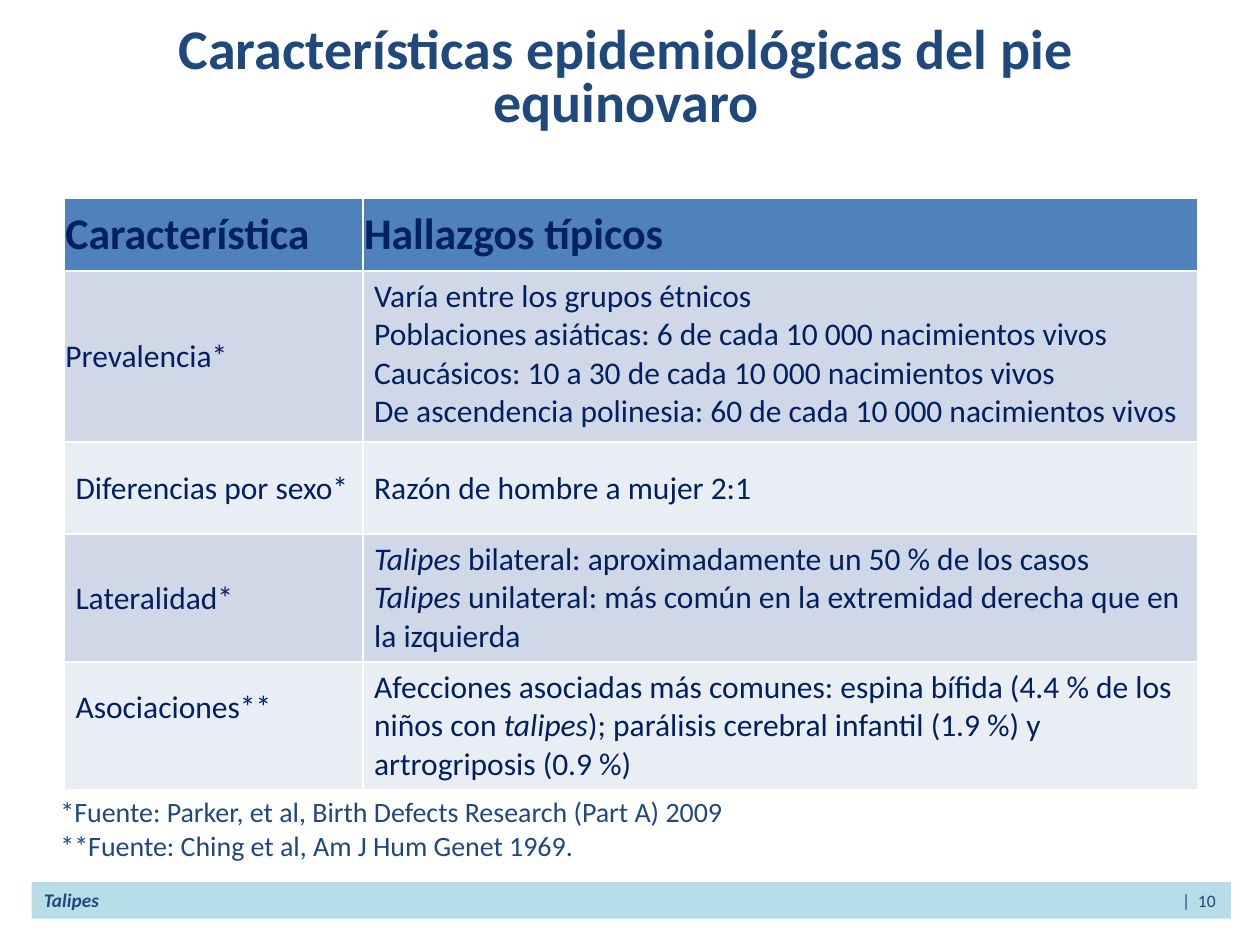
from lxml import etree
from pptx import Presentation, util as u
from pptx.dml.color import RGBColor
from pptx.enum import shapes, text
from pptx.oxml.ns import qn

FONT, BLUE, NAVY = "Calibri", "1F497D", "002060"
COLS = 100  # the slide is a grid of 100 columns by 75 rows

prs = Presentation()
prs.slide_width, prs.slide_height = u.Inches(10), u.Inches(7.5)
unit = prs.slide_width // COLS


def grid(*cells):
    """Turn grid columns and rows into lengths."""
    return [u.Emu(round(n * unit)) for n in cells]


def write(p, marked, size, colour, bold=False):
    """Fill a paragraph; parts between underscores become italic."""
    p.font.name, p.font.size, p.font.bold = FONT, u.Pt(size), bold
    p.font.color.rgb = RGBColor.from_string(colour)
    for i, part in enumerate(marked.split("_")):
        if part:
            r = p.add_run()
            r.text = part
            if i % 2:
                r.font.italic = True


s = prs.slides.add_slide(prs.slide_layouts[5])

# Footer bar, with the page number on a right-aligned tab
bar = s.shapes.add_shape(shapes.MSO_SHAPE.RECTANGLE, *grid(2.5, 70, 95.2, 2.9))
bar.shadow.inherit = False
bar.fill.solid()
bar.fill.fore_color.rgb = RGBColor.from_string("B7DEE8")
bar.line.fill.background()
bar.text_frame.vertical_anchor = text.MSO_ANCHOR.MIDDLE
p = bar.text_frame.paragraphs[0]
p.alignment = text.PP_ALIGN.LEFT
write(p, "_Talipes_\t|  10", 10, BLUE)
p.runs[0].font.size, p.runs[0].font.bold = u.Pt(11), True
tabs = etree.Element(qn("a:tabLst"))
etree.SubElement(tabs, qn("a:tab"), pos=str(grid(93)[0]), algn="r")
p._p.pPr.insert(0, tabs)

# Title
title = s.shapes.title
title.left, title.top, title.width, title.height = grid(4.7, 5, 90, 6.1)
title.text_frame.vertical_anchor = text.MSO_ANCHOR.BOTTOM
p = title.text_frame.paragraphs[0]
p.alignment, p.line_spacing = text.PP_ALIGN.CENTER, u.Pt(30)
write(p, "Características epidemiológicas del pie equinovaro", 32, BLUE, True)

# Table: row height, characteristic, findings
rows = [
    (5.8, "Característica", ["Hallazgos típicos"]),
    (13.6, "Prevalencia*", [
        "Varía entre los grupos étnicos",
        "Poblaciones asiáticas: 6 de cada 10 000 nacimientos vivos",
        "Caucásicos: 10 a 30 de cada 10 000 nacimientos vivos",
        "De ascendencia polinesia: 60 de cada 10 000 nacimientos vivos"]),
    (7.3, "Diferencias por sexo*", ["Razón de hombre a mujer 2:1"]),
    (8.8, "Lateralidad*", [
        "_Talipes_ bilateral: aproximadamente un 50 % de los casos",
        "_Talipes_ unilateral: más común en la extremidad derecha que en la izquierda"]),
    (5.7, "Asociaciones**", [
        "Afecciones asociadas más comunes: espina bífida (4.4 % de los niños con "
        "_talipes_); parálisis cerebral infantil (1.9 %) y artrogriposis (0.9 %)"]),
]
table = s.shapes.add_table(len(rows), 2, *grid(5.1, 15.7, 90, 41.2)).table
table.columns[0].width, table.columns[1].width = grid(23.7, 66.3)
for i, (height, name, findings) in enumerate(rows):
    table.rows[i].height = grid(height)[0]
    fill = "4F81BD" if i == 0 else ("E9EDF4", "D0D8E8")[i % 2]
    for j, lines in enumerate(([name], findings)):
        cell = table.cell(i, j)
        cell.fill.solid()
        cell.fill.fore_color.rgb = RGBColor.from_string(fill)
        top_aligned = j == 1 and i in (1, 3, 4)
        cell.vertical_anchor = text.MSO_ANCHOR.TOP if top_aligned else text.MSO_ANCHOR.MIDDLE
        tight = i == 0 or (i, j) == (1, 0)
        margins = grid(0.1, 0.1, 0.1, 0) if tight else grid(0.9, 0.5, 0.9, 0.5)
        cell.margin_left, cell.margin_top, cell.margin_right, cell.margin_bottom = margins
        tf = cell.text_frame
        for k, line in enumerate(lines):
            p = tf.add_paragraph() if k else tf.paragraphs[0]
            write(p, line, 18 if i else 25, NAVY, i == 0)
# The last label sits a little above the middle of its row
table.cell(len(rows) - 1, 0).margin_bottom = grid(3.4)[0]

# Sources
tf = s.shapes.add_textbox(*grid(-1.2, 62.6, 83.5, 9.4)).text_frame
tf.word_wrap = True
tf.margin_left = grid(6)[0]
write(tf.paragraphs[0], "*Fuente: Parker, et al, Birth Defects Research (Part A) 2009", 16, BLUE)
write(tf.add_paragraph(), "**Fuente: Ching et al, Am J Hum Genet 1969.", 16, BLUE)

prs.save("out.pptx")
